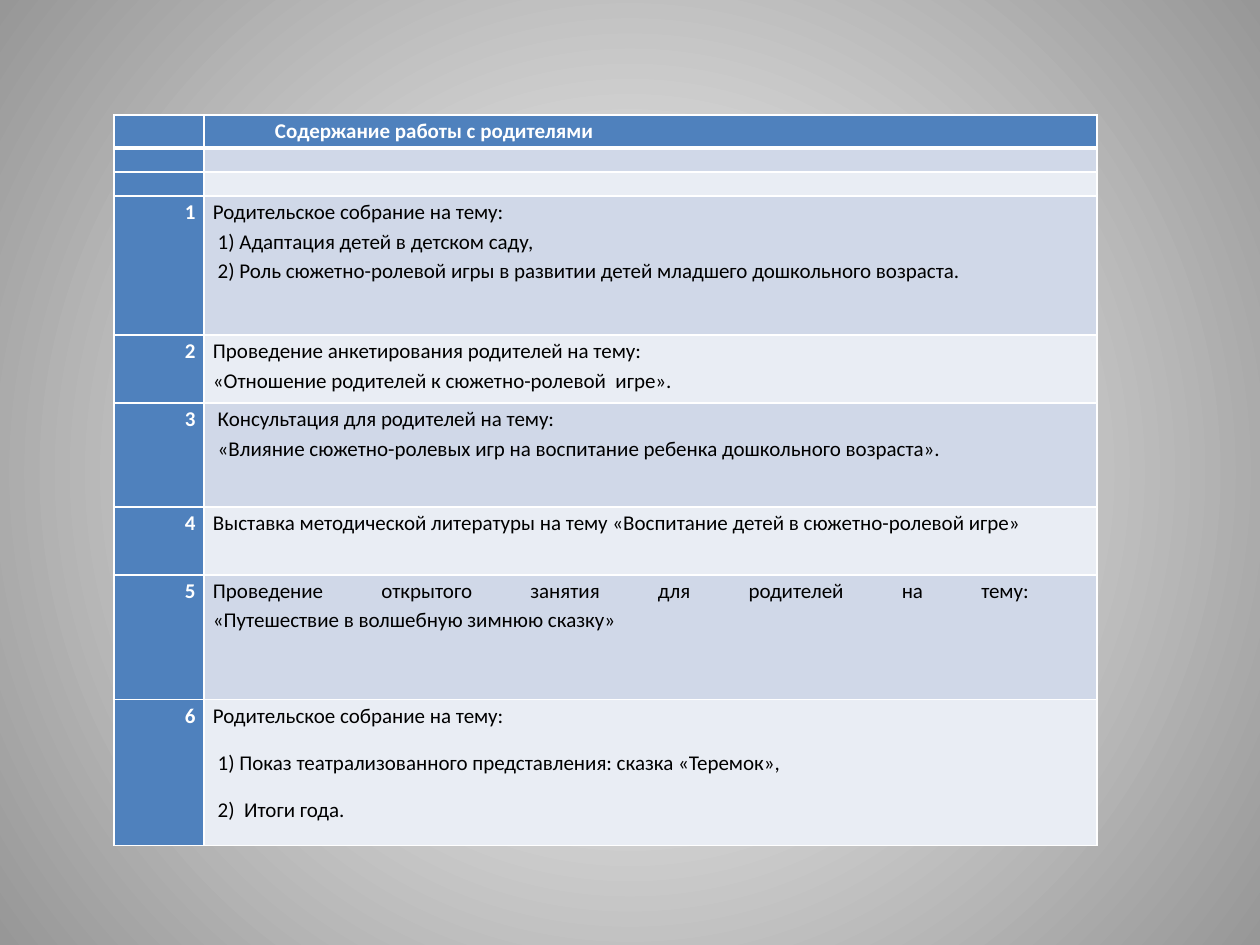
import dataclasses

import lxml.etree
import pptx
import pptx.dml.color
import pptx.enum.text
import pptx.oxml.ns
import pptx.util

RGB = pptx.dml.color.RGBColor
BLUE = RGB(0x4F, 0x81, 0xBD)
DARK = RGB(0xD0, 0xD8, 0xE8)
LIGHT = RGB(0xE9, 0xED, 0xF4)
WHITE = RGB(0xFF, 0xFF, 0xFF)
BLACK = RGB(0x00, 0x00, 0x00)
GRAY = RGB(0x97, 0x97, 0x97)

INCH = 126  # px
LEFT, TOP = 114, 115
COLS = (90, 893)
INSET = 9
INDENT = 62
THIN, THICK = 1, 3  # border widths, pt


@dataclasses.dataclass
class Row:
    high: int
    num: str = ""
    lines: tuple[str, ...] = ()
    after: int = 0


HEAD = "Содержание работы с родителями"
ROWS = [
    Row(33, "", (HEAD,)),
    Row(24),
    Row(24),
    Row(139, "1", (
        "Родительское собрание на тему:",
        " 1) Адаптация детей в детском саду, ",
        " 2) Роль сюжетно-ролевой игры в развитии детей младшего дошкольного возраста.",
    )),
    Row(68, "2", (
        "Проведение анкетирования родителей на тему: ",
        "«Отношение родителей к сюжетно-ролевой  игре».",
    )),
    Row(104, "3", (
        " Консультация для родителей на тему:",
        " «Влияние сюжетно-ролевых игр на воспитание ребенка дошкольного возраста».",
    )),
    Row(68, "4", (
        "Выставка методической литературы на тему «Воспитание детей в сюжетно-ролевой игре»",
    )),
    Row(125, "5", (
        "Проведение открытого занятия для родителей на тему: \v"
        "«Путешествие в волшебную зимнюю сказку»",
    ), 10),
    Row(146, "6", (
        "Родительское собрание на тему:",
        " 1) Показ театрализованного представления: сказка «Теремок»,",
        " 2)  Итоги года.",
    ), 10),
]


def px(num: int) -> int:
    return round(num * 914400 / INCH)


def node(root, tag: str, **vals):
    return lxml.etree.SubElement(root, pptx.oxml.ns.qn(tag), vals)


def assign(item, vals: dict) -> None:
    for key, val in vals.items():
        setattr(item, key, val)


def paint(slide) -> None:
    """Fill the background with a round gradient."""
    fill = slide.background.fill
    fill.gradient()
    for stop, color in zip(fill.gradient_stops, (WHITE, GRAY)):
        stop.color.rgb = color
    grad = slide.element.find(".//" + pptx.oxml.ns.qn("a:gradFill"))
    grad.remove(grad.find(pptx.oxml.ns.qn("a:lin")))
    ring = node(grad, "a:path", path="circle")
    node(ring, "a:fillToRect", l="50000", t="50000", r="50000", b="50000")


def frame(cell, top: int, base: int) -> None:
    """Draw the four cell borders, which come before the fill."""
    props = cell._tc.get_or_add_tcPr()
    sides = {"L": THIN, "R": THIN, "T": top, "B": base}
    for spot, (side, wide) in enumerate(sides.items()):
        line = node(props, f"a:ln{side}", w=str(pptx.util.Pt(wide)))
        node(node(line, "a:solidFill"), "a:srgbClr", val=str(WHITE))
        props.insert(spot, line)


def write(cell, lines: tuple[str, ...], color: RGB, bold: bool,
          indent: int, after: int) -> None:
    body = cell.text_frame
    assign(cell, {"margin_left": px(INSET), "margin_right": px(INSET),
                  "margin_top": 0, "margin_bottom": 0})
    if not lines:  # a tiny end mark keeps empty rows low
        node(body.paragraphs[0]._p, "a:endParaRPr", sz="100")
    for spot, text in enumerate(lines):
        para = body.add_paragraph() if spot else body.paragraphs[0]
        para.text = text
        assign(para, {"alignment": pptx.enum.text.PP_ALIGN.JUSTIFY,
                      "line_spacing": 1.15,
                      "space_after": pptx.util.Pt(after)})
        if indent:
            props = para._p.get_or_add_pPr()
            props.set("marL", "0")
            props.set("indent", str(px(indent)))
        for run in para.runs:
            assign(run.font, {"name": "Calibri", "bold": bold,
                              "size": pptx.util.Pt(12)})
            run.font.color.rgb = color


def draw(slide) -> None:
    """Lay out the plan: a header, then banded rows."""
    high = sum(row.high for row in ROWS)
    table = slide.shapes.add_table(
        len(ROWS), len(COLS), px(LEFT), px(TOP), px(sum(COLS)), px(high)).table
    for col, wide in zip(table.columns, COLS):
        col.width = px(wide)
    for spot, row in enumerate(ROWS):
        table.rows[spot].height = px(row.high)
        head = spot == 0
        band = BLUE if head else DARK if spot % 2 else LIGHT
        mark, main = table.cell(spot, 0), table.cell(spot, 1)
        for cell, fill in ((mark, BLUE), (main, band)):
            cell.fill.solid()
            cell.fill.fore_color.rgb = fill
            frame(cell, THICK if spot == 1 else THIN, THICK if head else THIN)
        write(mark, (row.num,) if row.num else (), WHITE, True, INDENT, 0)
        write(main, row.lines, WHITE if head else BLACK, head,
              INDENT if head else 0, row.after)


def main() -> None:
    deck = pptx.Presentation()
    assign(deck, {"slide_width": px(1260), "slide_height": px(945)})
    slide = deck.slides.add_slide(deck.slide_layouts[6])
    paint(slide)
    draw(slide)
    deck.save("out.pptx")


if __name__ == "__main__":
    main()
